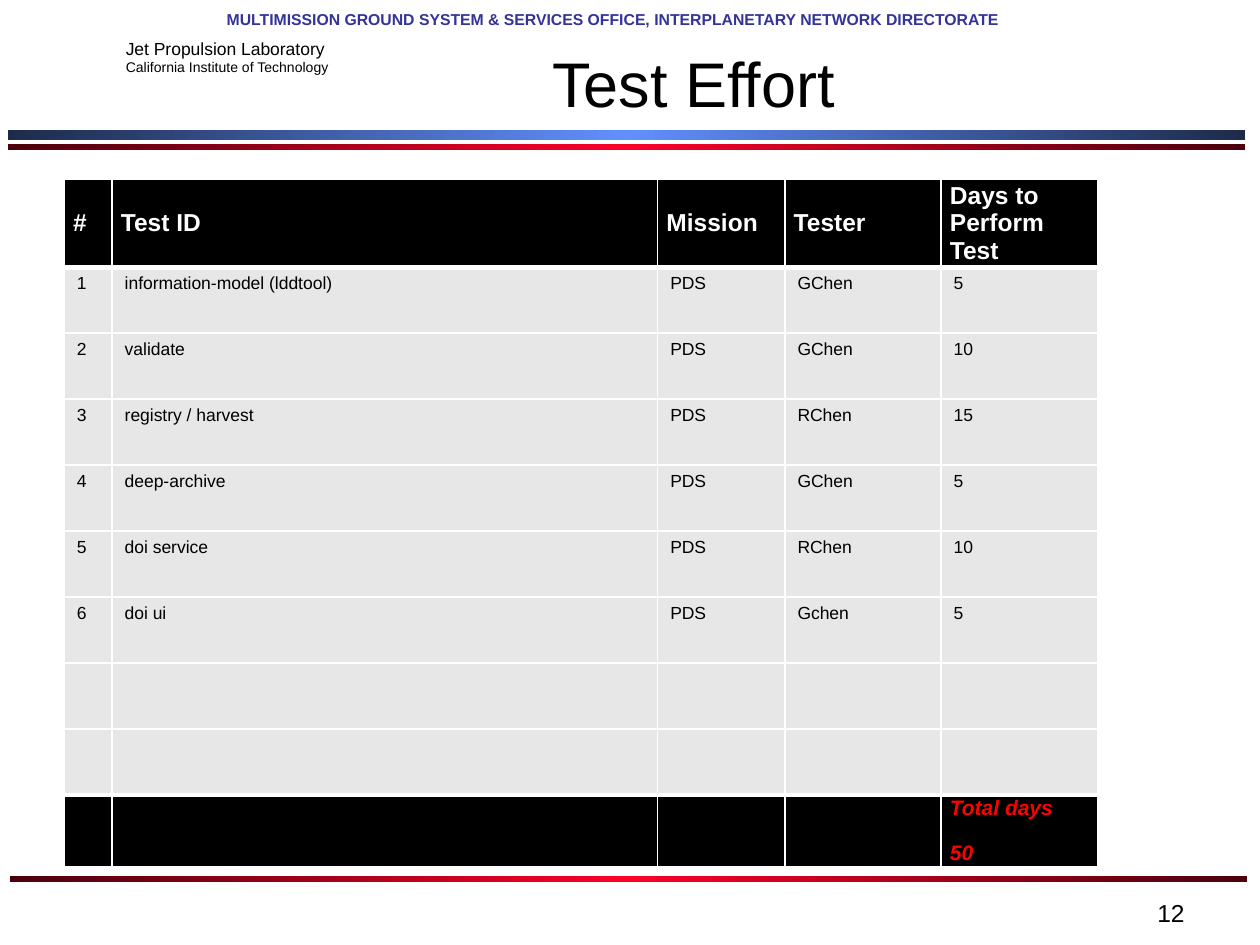
from copy import deepcopy
from dataclasses import dataclass

from lxml import etree
from pptx import Presentation
from pptx.dml.color import RGBColor
from pptx.enum.shapes import MSO_SHAPE
from pptx.enum.text import MSO_ANCHOR, PP_ALIGN
from pptx.oxml.ns import qn
from pptx.util import Inches, Pt

RECT = MSO_SHAPE.RECTANGLE
TOP, MIDDLE = MSO_ANCHOR.TOP, MSO_ANCHOR.MIDDLE
LEFT, CENTER, RIGHT = PP_ALIGN.LEFT, PP_ALIGN.CENTER, PP_ALIGN.RIGHT
JUSTIFY = PP_ALIGN.JUSTIFY


@dataclass(frozen=True)
class Theme:
    font: str = "Arial"
    ink: str = "000000"
    paper: str = "FFFFFF"
    office: str = "333399"
    alert: str = "FF0000"
    row: str = "E7E7E7"
    blue: tuple = ("1D2B4B", "618FFD", "1D2B4B")
    red: tuple = ("4B000C", "FC0128", "4B000C")
    title: int = 36
    heading: int = 14
    total: int = 12
    body: int = 10
    banner: int = 9
    small: int = 8
    thin: int = 1
    thick: int = 3


class SlideBuilder:
    """Places elements on a grid of 100 columns by 75 rows."""

    COLUMNS, ROWS = 100, 75

    def __init__(self, theme):
        self.theme = theme
        self.deck = Presentation()
        self.deck.slide_width, self.deck.slide_height = Inches(10), Inches(7.5)
        self.slide = self.deck.slides.add_slide(self.deck.slide_layouts[6])

    def across(self, columns):
        return round(self.deck.slide_width * columns / self.COLUMNS)

    def down(self, rows):
        return round(self.deck.slide_height * rows / self.ROWS)

    def area(self, left, top, width, height):
        return self.across(left), self.down(top), self.across(width), self.down(height)

    def style(self, paragraph, size, color, align=LEFT, bold=False, italic=False):
        paragraph.alignment = align
        for run in paragraph.runs:
            font = run.font
            font.name, font.size = self.theme.font, Pt(size)
            font.bold, font.italic = bold, italic
            font.color.rgb = RGBColor.from_string(color)

    def text(self, area, lines, color, align=LEFT, anchor=TOP, bold=False,
             wrap=True, inset=True):
        """Each line is a pair of wording and type size."""
        frame = self.slide.shapes.add_textbox(*self.area(*area)).text_frame
        frame.word_wrap, frame.vertical_anchor = wrap, anchor
        if not inset:
            frame.margin_left = frame.margin_right = 0
            frame.margin_top = frame.margin_bottom = 0
        frame.text = "\n".join(wording for wording, _ in lines)
        for paragraph, (_, size) in zip(frame.paragraphs, lines):
            self.style(paragraph, size, color, align, bold)

    def band(self, area, colors):
        """A bar with a horizontal gradient of three colours."""
        bar = self.slide.shapes.add_shape(RECT, *self.area(*area))
        bar.shadow.inherit = False
        bar.line.fill.background()
        bar.fill.gradient()
        bar.fill.gradient_angle = 0
        first = bar._element.find(".//" + qn("a:gs"))
        first.addnext(deepcopy(first))
        for index, (stop, color) in enumerate(zip(bar.fill.gradient_stops, colors)):
            stop.position = index / 2
            stop.color.rgb = RGBColor.from_string(color)

    def border(self, cell, side, width):
        line = etree.SubElement(cell._tc.get_or_add_tcPr(), qn("a:ln" + side),
                                w=str(Pt(width)))
        solid = etree.SubElement(line, qn("a:solidFill"))
        etree.SubElement(solid, qn("a:srgbClr"), val=self.theme.paper)

    def cell(self, cell, wording, fill, thick_side, **look):
        """A heavy border marks the cells of the header and total rows."""
        for side in "LRTB":
            heavy = side == thick_side
            self.border(cell, side, self.theme.thick if heavy else self.theme.thin)
        cell.fill.solid()
        cell.fill.fore_color.rgb = RGBColor.from_string(fill)
        if not wording:
            return
        cell.text_frame.text = wording
        if fill == self.theme.ink:
            cell.vertical_anchor = MIDDLE
            cell.margin_left = cell.margin_right = Inches(0.07)
            cell.margin_top = cell.margin_bottom = 0
        for index, paragraph in enumerate(cell.text_frame.paragraphs):
            if fill == self.theme.ink:
                paragraph.space_after = Pt(6)
                if index:
                    paragraph.space_before = Pt(6)
            self.style(paragraph, **look)

    def table(self, left, top, widths, heights, records):
        """The first record is the header and the last one the total."""
        t = self.theme
        area = self.area(left, top, sum(widths), sum(heights))
        grid = self.slide.shapes.add_table(len(records), len(widths), *area).table
        grid.horz_banding = False
        for column, width in zip(grid.columns, widths):
            column.width = self.across(width)
        for row, height in zip(grid.rows, heights):
            row.height = self.down(height)

        header = dict(fill=t.ink, thick_side="B", size=t.heading, color=t.paper,
                      bold=True)
        body = dict(fill=t.row, thick_side=None, size=t.body, color=t.ink)
        total = dict(fill=t.ink, thick_side="T", size=t.total, color=t.alert,
                     align=JUSTIFY, bold=True, italic=True)
        looks = [header] + [body] * (len(records) - 2) + [total]
        for row, record, look in zip(grid.rows, records, looks):
            for cell, wording in zip(row.cells, record):
                self.cell(cell, wording, **look)


TESTS = [
    ("information-model (lddtool)", "GChen", 5),
    ("validate", "GChen", 10),
    ("registry / harvest", "RChen", 15),
    ("deep-archive", "GChen", 5),
    ("doi service", "RChen", 10),
    ("doi ui", "Gchen", 5),
]


def main():
    theme = Theme()
    page = SlideBuilder(theme)

    # Letterhead and title
    page.text((16.1, 0.8, 65, 1.7),
              [("MULTIMISSION GROUND SYSTEM & SERVICES OFFICE, "
                "INTERPLANETARY NETWORK DIRECTORATE", theme.banner)],
              theme.office, CENTER, bold=True, inset=False)
    page.text((9, 2.5, 18.5, 4),
              [("Jet Propulsion Laboratory", theme.body),
               ("California Institute of Technology", theme.small)],
              theme.ink, wrap=False)
    page.text((26.7, 3, 56.7, 7), [("Test Effort", theme.title)],
              theme.ink, CENTER, MIDDLE)

    # Rules above and below the content
    page.band((0.6, 10.3, 98.2, 0.8), theme.blue)
    page.band((0.6, 11.4, 98.2, 0.5), theme.red)
    page.band((0.8, 69.5, 98.2, 0.5), theme.red)

    # Test table
    header = ("#", "Test ID", "Mission", "Tester", "Days to Perform Test")
    tests = [(str(number), test, "PDS", tester, str(days))
             for number, (test, tester, days) in enumerate(TESTS, 1)]
    spare = [("",) * len(header)] * 2
    days_total = sum(days for _, _, days in TESTS)
    total = ("",) * 4 + (f"Total days\n{days_total}",)
    records = [header, *tests, *spare, total]
    heights = [6.5] + [5.24] * (len(records) - 1)
    page.table(5.1, 14.2, (3.8, 43.3, 10.1, 12.4, 12.4), heights, records)

    # Page number
    page.text((71.7, 70.8, 23.3, 2.7), [("12", theme.heading)], theme.ink, RIGHT)

    page.deck.save("out.pptx")


if __name__ == "__main__":
    main()
